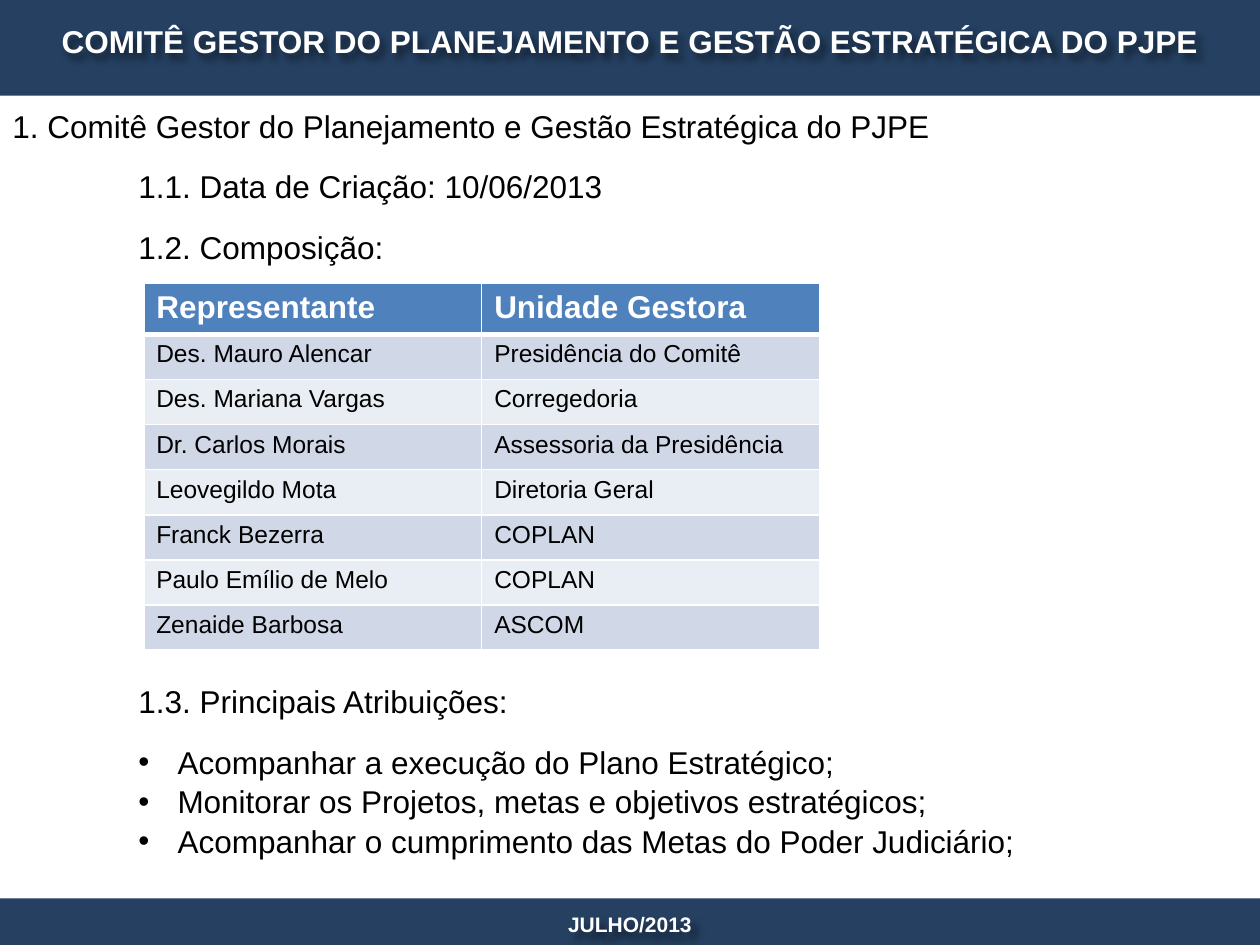
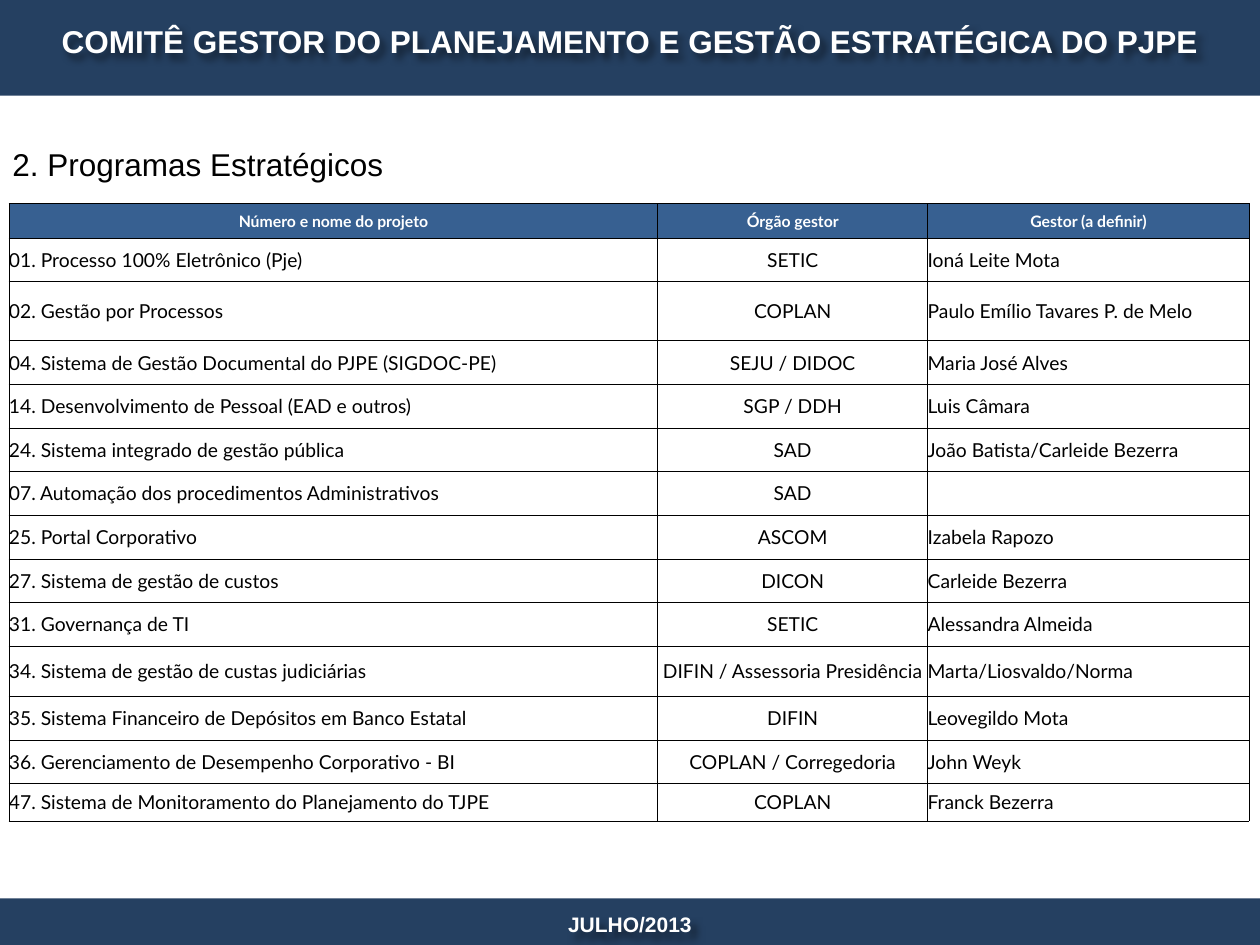
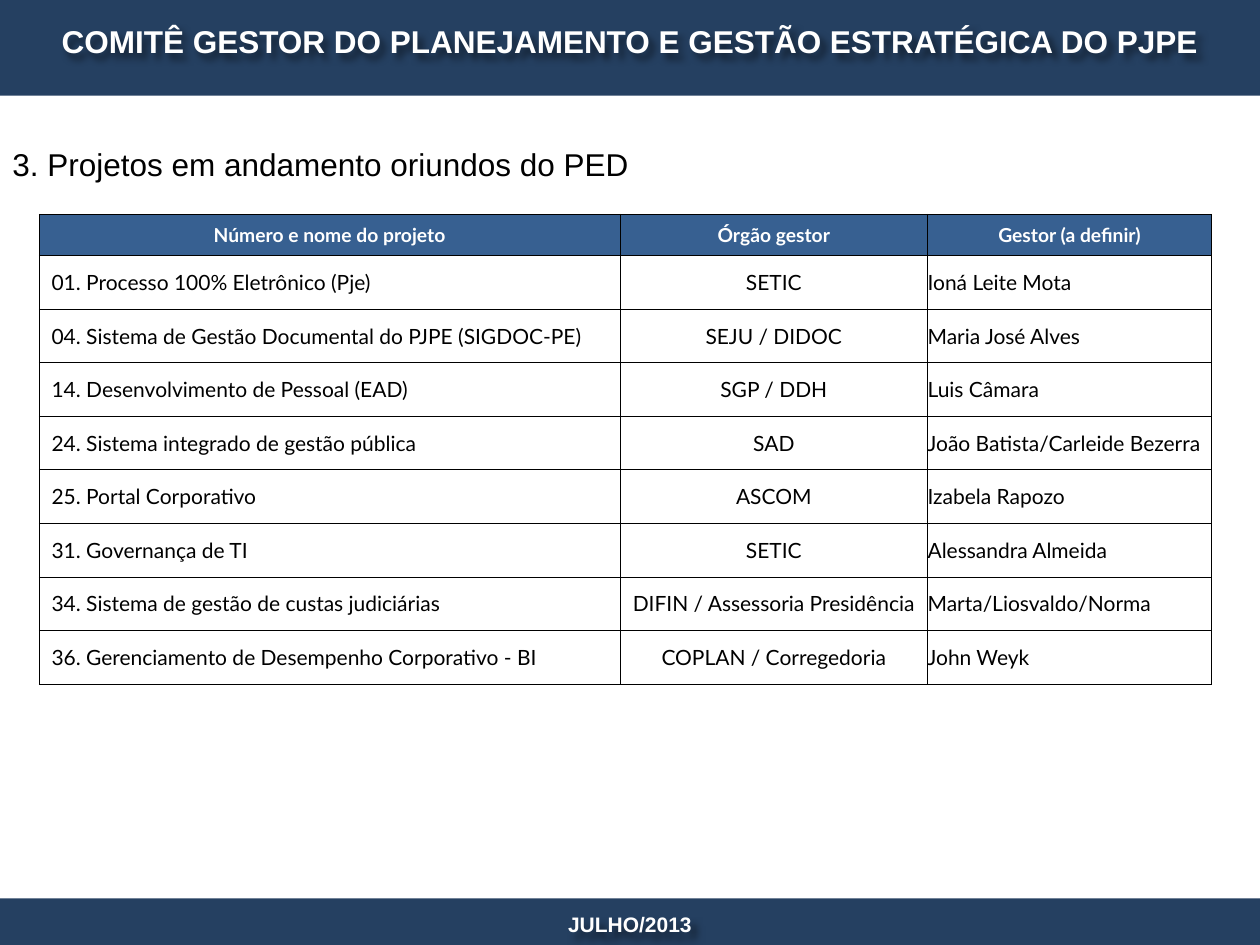
"""Build the three slides of the strategic planning committee deck."""
from lxml.etree import SubElement
from pptx import Presentation
from pptx.dml.color import RGBColor
from pptx.enum.shapes import MSO_SHAPE
from pptx.enum.text import MSO_ANCHOR, PP_ALIGN
from pptx.oxml import parse_xml
from pptx.oxml.ns import nsdecls, qn
from pptx.util import Cm, Pt

NAVY, BLUE, STEEL = "254061", "4F81BD", "376091"
PALE, MIST = "D0D8E8", "E9EDF4"
WHITE, BLACK = "FFFFFF", "000000"
LEFT, MID = PP_ALIGN.LEFT, PP_ALIGN.CENTER
WIDE = 25.4

SHADE = (
    f'<a:effectLst {nsdecls("a")}><a:outerShdw blurRad="50800" dist="50800" '
    'dir="2700000"><a:srgbClr val="000000"><a:alpha val="50000"/></a:srgbClr>'
    "</a:outerShdw></a:effectLst>"
)


def write(para, text, size, color=BLACK, bold=False, face="Arial", align=LEFT):
    """Add one styled run to a paragraph."""
    para.alignment = align
    run = para.add_run()
    run.text = text
    run.font.size, run.font.bold, run.font.name = Pt(size), bold, face
    run.font.color.rgb = RGBColor.from_string(color)


def grid(slide, left, top, cols, rows, data, look):
    """Add a table whose look holds its sizes, fills, borders and insets."""
    table = slide.shapes.add_table(
        len(rows), len(cols), Cm(left), Cm(top), Cm(sum(cols)), Cm(sum(rows))
    ).table
    table.horz_banding = False
    for col, width in zip(table.columns, cols):
        col.width = Cm(width)
    for i, (row, height) in enumerate(zip(table.rows, rows)):
        row.height = Cm(height)
        head = i == 0
        for j, (cell, text) in enumerate(zip(row.cells, data[i])):
            edge = cell._tc.get_or_add_tcPr()
            for side in "LRTB":
                rule = (side, i) in (("B", 0), ("T", 1))
                width = look["rule"] if rule else look["line"]
                line = SubElement(edge, qn(f"a:ln{side}"), w=str(Pt(width)))
                fill = SubElement(line, qn("a:solidFill"))
                SubElement(fill, qn("a:srgbClr"), val=look["edge"])
            tone = look["head"] if head else look["bands"][(i - 1) % 2]
            cell.fill.solid()
            cell.fill.fore_color.rgb = RGBColor.from_string(tone)
            if look["tight"]:
                cell.margin_left = cell.margin_right = 0
                cell.margin_top = cell.margin_bottom = 0
                cell.vertical_anchor = MSO_ANCHOR.MIDDLE
            if j == 0 and not head:
                cell.margin_left = Cm(look["pad"])
            if text:
                mid = look["tight"] and (head or j == 1)
                write(cell.text_frame.paragraphs[0], text, look["sizes"][not head],
                      WHITE if head else BLACK, head, look["face"],
                      MID if mid else LEFT)


deck = Presentation()
deck.slide_width, deck.slide_height = Cm(WIDE), Cm(19.05)

soft = dict(edge=WHITE, line=1, rule=3, head=BLUE, bands=(PALE, MIST),
            tight=False, pad=0.25, sizes=(18, 14), face="Arial")
plain = dict(edge=BLACK, line=0.5, rule=0.5, head=STEEL, bands=(WHITE, WHITE),
             tight=True, pad=0, sizes=(9, 11), face="Lato")
roomy = plain | dict(pad=0.25, sizes=(11, 12))

team = [
    ("Representante", "Unidade Gestora"),
    ("Des. Mauro Alencar", "Presidência do Comitê"),
    ("Des. Mariana Vargas", "Corregedoria"),
    ("Dr. Carlos Morais", "Assessoria da Presidência"),
    ("Leovegildo Mota", "Diretoria Geral"),
    ("Franck Bezerra", "COPLAN"),
    ("Paulo Emílio de Melo", "COPLAN"),
    ("Zenaide Barbosa", "ASCOM"),
]
heads = ("Número e nome do projeto", "Órgão gestor", "Gestor (a definir)")
plans = [
    heads,
    ("01. Processo 100% Eletrônico (Pje)", "SETIC", "Ioná Leite Mota"),
    ("02. Gestão por Processos", "COPLAN", "Paulo Emílio Tavares P. de Melo"),
    ("04. Sistema de Gestão Documental do PJPE (SIGDOC-PE)", "SEJU / DIDOC",
     "Maria José Alves"),
    ("14. Desenvolvimento de Pessoal (EAD e outros)", "SGP / DDH", "Luis Câmara"),
    ("24. Sistema integrado de gestão pública", "SAD",
     "João Batista/Carleide Bezerra"),
    ("07. Automação dos procedimentos Administrativos", "SAD", ""),
    ("25. Portal Corporativo", "ASCOM", "Izabela Rapozo"),
    ("27. Sistema de gestão de custos", "DICON", "Carleide Bezerra"),
    ("31. Governança de TI", "SETIC", "Alessandra Almeida"),
    ("34. Sistema de gestão de custas judiciárias",
     "DIFIN / Assessoria Presidência", "Marta/Liosvaldo/Norma"),
    ("35. Sistema Financeiro de Depósitos em Banco Estatal", "DIFIN",
     "Leovegildo Mota"),
    ("36. Gerenciamento de Desempenho Corporativo - BI",
     "COPLAN / Corregedoria", "John Weyk"),
    ("47. Sistema de Monitoramento do Planejamento do TJPE", "COPLAN",
     "Franck Bezerra"),
]
works = [
    heads,
    ("01. Processo 100% Eletrônico (Pje)", "SETIC", "Ioná Leite Mota"),
    ("04. Sistema de Gestão Documental do PJPE (SIGDOC-PE)", "SEJU / DIDOC",
     "Maria José Alves"),
    ("14. Desenvolvimento de Pessoal (EAD)", "SGP / DDH", "Luis Câmara"),
    ("24. Sistema integrado de gestão pública", "SAD",
     "João Batista/Carleide Bezerra"),
    ("25. Portal Corporativo", "ASCOM", "Izabela Rapozo"),
    ("31. Governança de TI", "SETIC", "Alessandra Almeida"),
    ("34. Sistema de gestão de custas judiciárias",
     "DIFIN / Assessoria Presidência", "Marta/Liosvaldo/Norma"),
    ("36. Gerenciamento de Desempenho Corporativo - BI",
     "COPLAN / Corregedoria", "John Weyk"),
]

intro = [
    ("1. Comitê Gestor do Planejamento e Gestão Estratégica do PJPE", 0, 0, False),
    ("1.1. Data de Criação: 10/06/2013", 13, 2.54, False),
    ("1.2. Composição:", 13, 2.54, False),
    ("1.3. Principais Atribuições:", 238, 2.54, False),
    ("Acompanhar a execução do Plano Estratégico;", 13, 3.33, True),
    ("Monitorar os Projetos, metas e objetivos estratégicos;", 1, 3.33, True),
    ("Acompanhar o cumprimento das Metas do Poder Judiciário;", 1, 3.33, True),
]
pages = [
    (2.03, 16.15, MSO_ANCHOR.TOP, intro,
     (2.9, 5.72, [6.81] * 2, [0.95] + [0.91] * 7, team, soft)),
    (2.01, 1.8, MSO_ANCHOR.BOTTOM, [("2. Programas Estratégicos", 0, 0, False)],
     (0.18, 4.11, [13.08, 5.44, 6.48],
      [0.69, 0.88, 1.19] + [0.88] * 7 + [1.01, 0.88, 0.88, 0.75], plans, plain)),
    (2.03, 2.57, MSO_ANCHOR.MIDDLE,
     [("3. Projetos em andamento oriundos do PED", 0, 0, False)],
     (0.79, 4.32, [11.71, 6.2, 5.72], [0.83] + [1.08] * 8, works, roomy)),
]
bands = [(18.11, 0.94), (-0.02, 1.95)]
labels = [
    ("JULHO/2013", 12, 18.14, 0.99),
    ("COMITÊ GESTOR DO PLANEJAMENTO E GESTÃO ESTRATÉGICA DO PJPE", 18, 0.13, 1.4),
]

for top, height, anchor, lines, chart in pages:
    slide = deck.slides.add_slide(deck.slide_layouts[6])
    for y, tall in bands:
        band = slide.shapes.add_shape(
            MSO_SHAPE.RECTANGLE, 0, Cm(y), Cm(WIDE), Cm(tall))
        band.shadow.inherit = False
        band.fill.solid()
        band.fill.fore_color.rgb = RGBColor.from_string(NAVY)
        band.line.fill.background()

    body = slide.shapes.add_textbox(0, Cm(top), Cm(WIDE), Cm(height)).text_frame
    body.word_wrap, body.vertical_anchor = True, anchor
    for n, (text, gap, dent, dot) in enumerate(lines):
        para = body.add_paragraph() if n else body.paragraphs[0]
        props = para._p.get_or_add_pPr()
        props.set("marL", str(Cm(dent)))
        if dot:
            props.set("indent", str(Cm(-0.79)))
            SubElement(props, qn("a:buFont"), typeface="Arial")
            SubElement(props, qn("a:buChar"), char="•")
        if gap:
            para.space_before = Pt(gap)
        write(para, text, 18)

    grid(slide, *chart)

    for text, size, y, tall in labels:
        box = slide.shapes.add_textbox(0, Cm(y), Cm(WIDE), Cm(tall))
        box._element.spPr.append(parse_xml(SHADE))
        frame = box.text_frame
        frame.word_wrap, frame.vertical_anchor = True, MSO_ANCHOR.MIDDLE
        write(frame.paragraphs[0], text, size, WHITE, True, align=MID)

deck.save("out.pptx")
